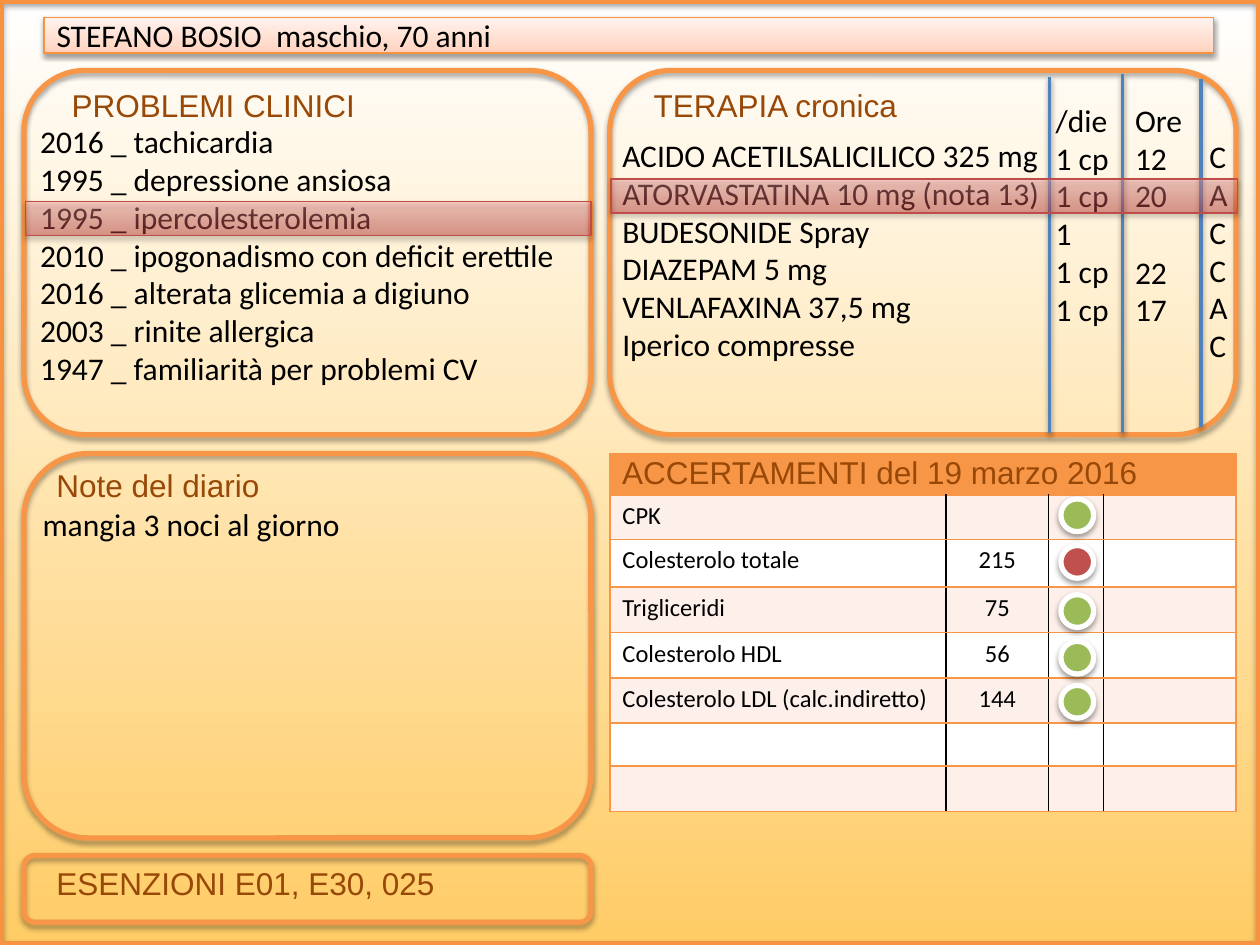
from dataclasses import dataclass
from typing import NamedTuple, Optional

from lxml.etree import SubElement
from pptx import Presentation
from pptx.dml.color import RGBColor
from pptx.enum.shapes import MSO_CONNECTOR, MSO_SHAPE
from pptx.enum.text import MSO_ANCHOR, PP_ALIGN
from pptx.oxml.ns import qn
from pptx.util import Emu, Inches, Pt

# Grid of 100 columns by 75 rows of square cells
CELL = Inches(0.1)
COLUMNS, ROWS = 100, 75

COLORS = {
    "orange": "F79646", "frame": "F69240", "brown": "984807", "black": "000000",
    "white": "FFFFFF", "sand": "FFCC66", "band": "FDEFE9", "blue": "4F81BD",
    "green": "9BBB59", "red": "C0504D", "alert": "BF4C48",
    "peach": "FFD2BD", "peach mid": "FFDED0", "peach light": "FFF2ED",
    "alert dark": "D1403C", "alert light": "FFA6A5",
}


class Box(NamedTuple):
    column: float
    row: float
    width: float
    height: float


class Stop(NamedTuple):
    percent: int
    color: str
    opacity: int = 100


@dataclass
class Block:
    box: Box
    lines: list[str]
    font: str = "Calibri"
    color: str = "black"


@dataclass
class Outline:
    box: Box
    kind: MSO_SHAPE = MSO_SHAPE.ROUNDED_RECTANGLE
    line: str = "orange"
    weight: float = 3
    fill: Optional[str] = None
    stops: tuple[Stop, ...] = ()


def cells(count: float) -> Emu:
    return Emu(round(count * CELL))


def rgb(name: str) -> RGBColor:
    return RGBColor.from_string(COLORS[name])


def add_color(parent, name: str, opacity: int = 100) -> None:
    color = SubElement(parent, qn("a:srgbClr"), val=COLORS[name])
    if opacity < 100:
        SubElement(color, qn("a:alpha"), val=str(opacity * 1000))


def set_gradient(fill, element, stops: tuple[Stop, ...], angle: int) -> None:
    fill.gradient()
    gradient = element.find(".//" + qn("a:gradFill"))
    for child in list(gradient):
        gradient.remove(child)
    stop_list = SubElement(gradient, qn("a:gsLst"))
    for stop in stops:
        node = SubElement(stop_list, qn("a:gs"), pos=str(stop.percent * 1000))
        add_color(node, stop.color, stop.opacity)
    SubElement(gradient, qn("a:lin"), ang=str(angle * 60000), scaled="0")


def add_shadow(shape) -> None:
    effects = SubElement(shape.element.spPr, qn("a:effectLst"))
    shadow = SubElement(effects, qn("a:outerShdw"), blurRad=str(Pt(3.1)),
                        dist=str(Pt(1.7)), dir="5400000", rotWithShape="0")
    add_color(shadow, "black", 36)


def add_run(paragraph, text: str, size: float, font: str, color: str) -> None:
    run = paragraph.add_run()
    run.text = text
    run.font.size = Pt(size)
    run.font.name = font
    run.font.color.rgb = rgb(color)


def draw_outline(slide, outline: Outline):
    shape = slide.shapes.add_shape(outline.kind, *map(cells, outline.box))
    if outline.stops:
        set_gradient(shape.fill, shape.element, outline.stops, 270)
    elif outline.fill:
        shape.fill.solid()
        shape.fill.fore_color.rgb = rgb(outline.fill)
    else:
        shape.fill.background()
    shape.line.color.rgb = rgb(outline.line)
    shape.line.width = Pt(outline.weight)
    add_shadow(shape)
    return shape


def draw_block(slide, block: Block) -> None:
    frame = slide.shapes.add_textbox(*map(cells, block.box)).text_frame
    frame.word_wrap = True
    paragraph, gap = frame.paragraphs[0], 0
    for index, text in enumerate(block.lines):
        if not text:  # an unfilled row becomes space above the next one
            gap += 22
            continue
        if index:
            paragraph = frame.add_paragraph()
        if gap:
            paragraph.space_before = Pt(gap)
            gap = 0
        add_run(paragraph, text, 18, block.font, block.color)


def draw_divider(slide, column: float, top: float, bottom: float) -> None:
    line = slide.shapes.add_connector(MSO_CONNECTOR.STRAIGHT, cells(column), cells(top),
                                      cells(column), cells(bottom))
    line.line.color.rgb = rgb("blue")
    line.line.width = Pt(2)
    add_shadow(line)


def set_borders(cell, sides: dict[str, str]) -> None:
    properties = cell._tc.get_or_add_tcPr()
    for position, side in enumerate(("L", "R", "T", "B")):
        border = properties.makeelement(qn(f"a:ln{side}"), {"w": str(Pt(1))})
        add_color(SubElement(border, qn("a:solidFill")), sides[side])
        properties.insert(position, border)


def draw_exams(slide, box: Box, widths: list[float], heights: list[float],
               exams: list[tuple[str, str]]) -> None:
    table = slide.shapes.add_table(len(heights), len(widths), *map(cells, box)).table
    for column, width in zip(table.columns, widths):
        column.width = cells(width)
    last = len(widths) - 1
    for index, height in enumerate(heights):
        table.rows[index].height = cells(height)
        exam = exams[index - 1] if 0 < index <= len(exams) else ()
        fill = "orange" if index == 0 else ("band" if index % 2 else "white")
        inner = "black" if index else "orange"
        for position in range(len(widths)):
            cell = table.cell(index, position)
            cell.fill.solid()
            cell.fill.fore_color.rgb = rgb(fill)
            set_borders(cell, {"L": inner if position else "orange",
                               "R": inner if position < last else "orange",
                               "T": "orange", "B": "orange"})
            text = exam[position] if position < len(exam) else ""
            if text:
                paragraph = cell.text_frame.paragraphs[0]
                paragraph.alignment = PP_ALIGN.CENTER if position else PP_ALIGN.LEFT
                add_run(paragraph, text, 14, "Calibri", "black")
            else:
                cell.margin_top = cell.margin_bottom = 0


def heading(column: float, row: float, width: float, text: str) -> Block:
    return Block(Box(column, row, width, 4), [text], "Arial", "brown")


def main() -> None:
    presentation = Presentation()
    presentation.slide_width, presentation.slide_height = cells(COLUMNS), cells(ROWS)
    slide = presentation.slides.add_slide(presentation.slide_layouts[6])
    set_gradient(slide.background.fill, slide.element,
                 (Stop(0, "white"), Stop(100, "sand")), 90)

    # Upper panels and list of problems
    left, right, panel_width, wide_width = 1.9, 48.4, 45, 49.7
    for box in (Box(left, 5.6, panel_width, 28.9), Box(right, 5.6, wide_width, 28.9)):
        draw_outline(slide, Outline(box))
    draw_block(slide, Block(Box(2.2, 9.2, 43.6, 25.2), [
        "2016 _ tachicardia", "1995 _ depressione ansiosa", "1995 _ ipercolesterolemia",
        "2010 _ ipogonadismo con deficit erettile", "2016 _ alterata glicemia a digiuno",
        "2003 _ rinite allergica", "1947 _ familiarità per problemi CV"]))

    # Patient bar and slide frame
    bar = draw_outline(slide, Outline(
        Box(3.5, 1.4, 92.8, 2.8), MSO_SHAPE.RECTANGLE, "frame", 0.75,
        stops=(Stop(0, "peach"), Stop(35, "peach mid"), Stop(100, "peach light"))))
    bar.text_frame.vertical_anchor = MSO_ANCHOR.MIDDLE
    patient = bar.text_frame.paragraphs[0]
    patient.alignment = PP_ALIGN.LEFT
    add_run(patient, "STEFANO BOSIO  maschio, 70 anni", 18, "Calibri", "black")
    draw_outline(slide, Outline(Box(0, 0, COLUMNS, ROWS), MSO_SHAPE.RECTANGLE, "frame", 4.5))

    # Therapy: drugs, dose, hour, class
    draw_block(slide, heading(4.7, 6.3, 25, "PROBLEMI CLINICI"))
    draw_block(slide, heading(50.9, 6.3, 25, "TERAPIA cronica"))
    for divider in ((83.3, 6.1, 34.4), (89.1, 5.9, 34.4), (95.3, 6.3, 33.9)):
        draw_divider(slide, *divider)
    for block in (
        Block(Box(right, 10.3, 43.5, 19.2), [
            "ACIDO ACETILSALICILICO 325 mg", "ATORVASTATINA 10 mg (nota 13)",
            "BUDESONIDE Spray", "DIAZEPAM 5 mg", "VENLAFAXINA 37,5 mg",
            "Iperico compresse"]),
        Block(Box(82.8, 7.5, 6.2, 22.2), ["/die", "1 cp", "1 cp", "1", "1 cp", "1 cp"]),
        Block(Box(89.1, 7.5, 6.2, 22.2), ["Ore", "12", "20", "", "22", "17"]),
        Block(Box(95, 10.4, 5, 19.2), list("CACCAC")),
    ):
        draw_block(slide, block)

    # Diary notes and exemptions
    draw_outline(slide, Outline(Box(left, 36, panel_width, 30.5)))
    draw_block(slide, heading(3.5, 36.5, 25, "Note del diario"))
    draw_block(slide, Block(Box(2.4, 39.6, 43.6, 4), ["mangia 3 noci al giorno"]))
    draw_outline(slide, Outline(Box(left, 67.9, panel_width, 5.3)))
    draw_block(slide, heading(3.5, 68.1, 35.4, "ESENZIONI E01, E30, 025"))

    # Exams table
    draw_exams(slide, Box(right, 36, wide_width, 28.5), [26.7, 8.1, 4.4, 10.5],
               [3.3, 3.5, 3.8, 3.6, 3.6, 3.6, 3.4, 3.6],
               [("CPK", ""), ("Colesterolo totale", "215"), ("Trigliceridi", "75"),
                ("Colesterolo HDL", "56"), ("Colesterolo LDL (calc.indiretto)", "144")])
    draw_block(slide, heading(right, 35.5, 51.6, "ACCERTAMENTI del 19 marzo 2016"))

    # Highlighted rows and status lights
    for box in (Box(2, 16, 44.9, 2.7), Box(48.5, 14.2, wide_width, 2.7)):
        draw_outline(slide, Outline(box, MSO_SHAPE.RECTANGLE, "alert", 0.75, stops=(
            Stop(0, "alert dark", 42), Stop(100, "alert light", 42))))
    for row, color in ((39.6, "green"), (43.3, "red"), (47.2, "green"),
                       (50.9, "green"), (54.4, "green")):
        draw_outline(slide, Outline(Box(84.2, row, 2.6, 2.6), MSO_SHAPE.OVAL, "white", 3, color))

    presentation.save("out.pptx")


if __name__ == "__main__":
    main()
